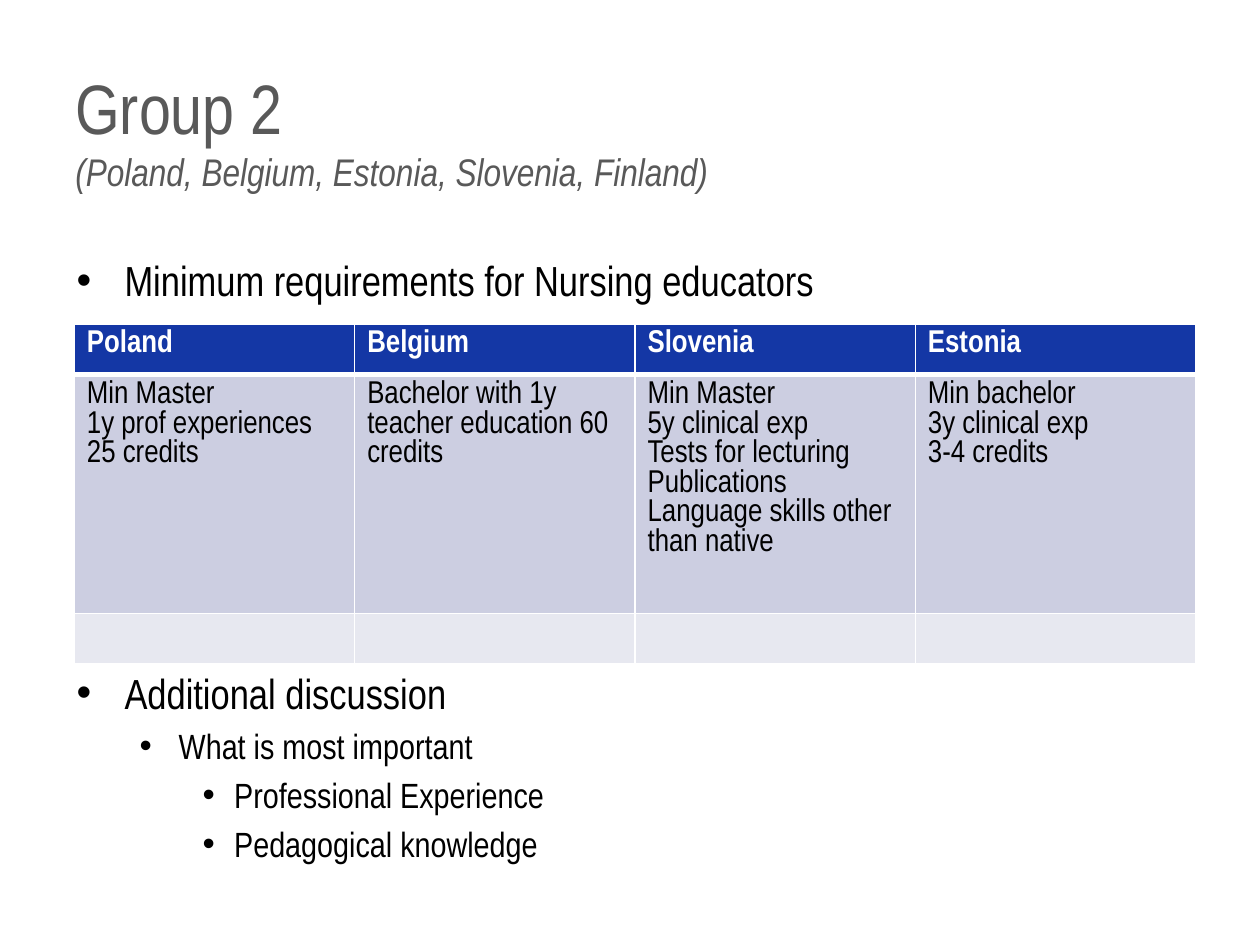
from pptx import Presentation
from pptx.dml.color import RGBColor
from pptx.enum.text import MSO_ANCHOR
from pptx.oxml.ns import qn
from pptx.util import Inches, Pt
from lxml.etree import SubElement

FONT = "Arial Narrow"
BLACK, WHITE, GREY = "000000", "FFFFFF", "595959"
HEADER_FILL, BODY_FILL, EMPTY_FILL = "1437A5", "CCCEE1", "E7E8F0"

# Text, level, space before in points
BULLETS = [
    ("Minimum requirements for Nursing educators", 0, 0),
    ("Additional discussion", 0, 207),  # leaves room for the table
    ("What is most important", 1, 4),
    ("Professional Experience", 2, 4),
    ("Pedagogical knowledge", 2, 4),
]
# Left margin, hanging indent (inches) and size for each level
LEVELS = [(0.38, 0.38, 24), (0.81, 0.31, 20), (1.25, 0.25, 20)]

REQUIREMENTS = {
    "Poland": ["Min Master", "1y prof experiences", "25 credits"],
    "Belgium": ["Bachelor with 1y teacher education 60 credits"],
    "Slovenia": ["Min Master", "5y clinical exp", "Tests for lecturing",
                 "Publications", "Language skills other than native"],
    "Estonia": ["Min bachelor", "3y clinical exp", "3-4 credits"],
}


def color(value):
    return RGBColor.from_string(value)


def add_run(p, text, fill, **formats):
    r = p.add_run()
    r.text = text
    r.font.color.rgb = color(fill)
    for name, value in {"name": FONT, **formats}.items():
        setattr(r.font, name, value)


def add_text_box(s, *box):
    tf = s.shapes.add_textbox(*map(Inches, box)).text_frame
    tf.word_wrap = True
    return tf


def add_title(s, title, countries):
    tf = add_text_box(s, 0.5, 0.4, 8.99, 1.25)
    tf.vertical_anchor = MSO_ANCHOR.MIDDLE
    p = tf.paragraphs[0]
    add_run(p, title, GREY, size=Pt(40))
    p.add_line_break()
    add_run(p, countries, GREY, size=Pt(22), italic=True)


def add_bullets(s, items):
    tf = add_text_box(s, 0.51, 1.97, 8.98, 5.14)
    for i, (text, level, gap) in enumerate(items):
        p = tf.add_paragraph() if i else tf.paragraphs[0]
        left, hang, size = LEVELS[level]
        p.level = level
        p.space_before = Pt(gap)
        pPr = p._p.get_or_add_pPr()
        pPr.set("marL", str(Inches(left)))
        pPr.set("indent", str(-Inches(hang)))
        SubElement(pPr, qn("a:buFont"), typeface="Arial")
        SubElement(pPr, qn("a:buChar"), char="•")
        add_run(p, text, BLACK, size=Pt(size))


def set_borders(cell, bottom):
    tcPr = cell._tc.get_or_add_tcPr()
    widths = {"a:lnL": 1, "a:lnR": 1, "a:lnT": 1, "a:lnB": bottom}
    for tag, width in widths.items():
        ln = SubElement(tcPr, qn(tag), w=str(Pt(width)))
        SubElement(SubElement(ln, qn("a:solidFill")), qn("a:srgbClr"), val=WHITE)


def fill_cell(cell, lines, fill, text_color=BLACK, bold=False, bottom=1):
    set_borders(cell, bottom)
    cell.fill.solid()
    cell.fill.fore_color.rgb = color(fill)
    tf = cell.text_frame
    for i, line in enumerate(lines):
        p = tf.add_paragraph() if i else tf.paragraphs[0]
        add_run(p, line, text_color, size=Pt(18), bold=bold)


def add_requirements_table(s, columns):
    # Rows start equal; the middle one grows with its text
    rows, row_height = 3, 0.4
    table = s.shapes.add_table(rows, len(columns), Inches(0.59), Inches(2.57),
                               Inches(8.9), Inches(rows * row_height)).table
    for c, (country, lines) in enumerate(columns.items()):
        fill_cell(table.cell(0, c), [country], HEADER_FILL, WHITE, bold=True, bottom=3)
        fill_cell(table.cell(1, c), lines, BODY_FILL)
        fill_cell(table.cell(2, c), [], EMPTY_FILL)


def main():
    prs = Presentation()
    prs.slide_width, prs.slide_height = Inches(10), Inches(7.5)
    s = prs.slides.add_slide(prs.slide_layouts[6])
    add_title(s, "Group 2", "(Poland, Belgium, Estonia, Slovenia, Finland)")
    add_bullets(s, BULLETS)
    add_requirements_table(s, REQUIREMENTS)
    prs.save("out.pptx")


if __name__ == "__main__":
    main()
